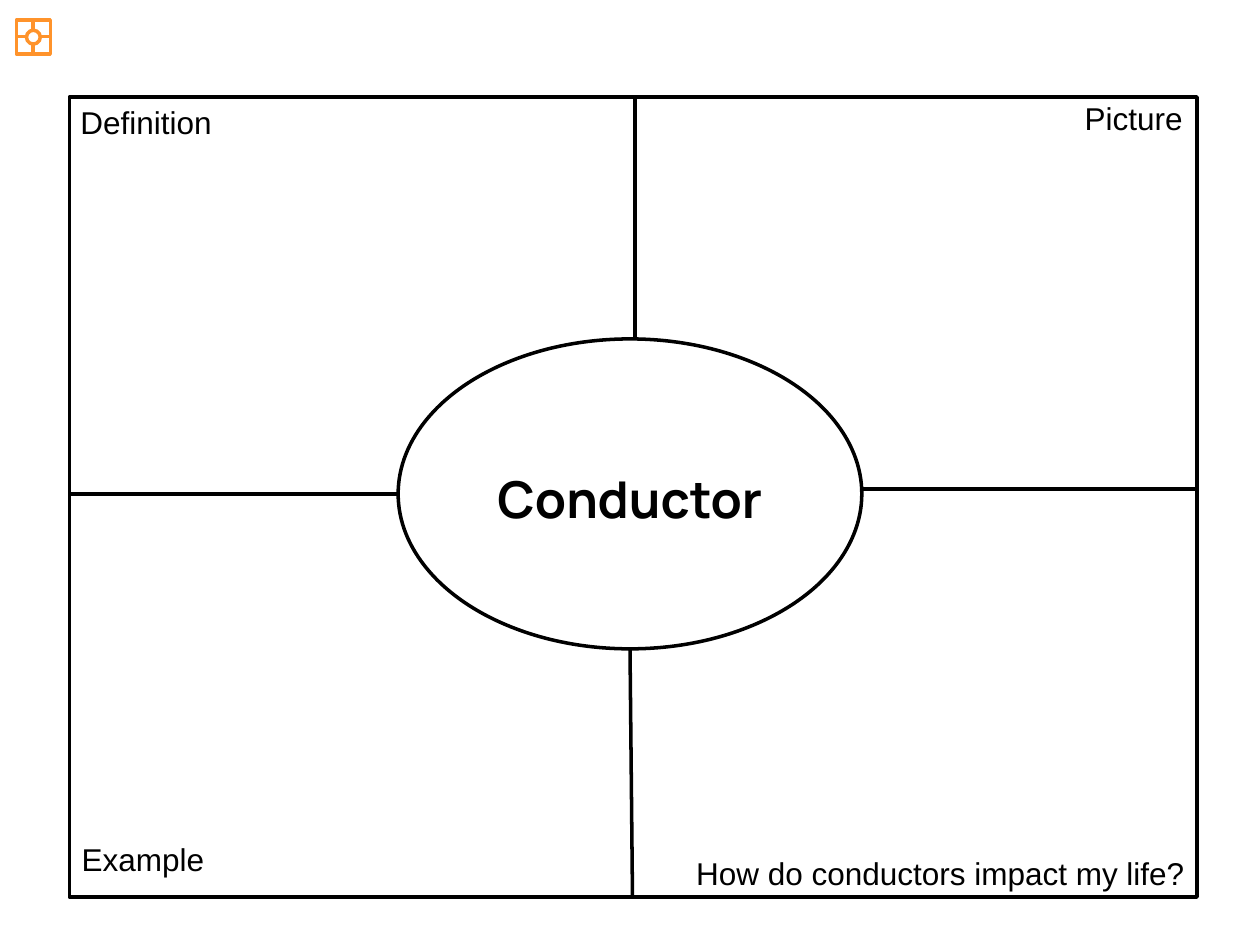
"""Build a four-square vocabulary organizer slide."""
from lxml import etree
from pptx import Presentation
from pptx.dml.color import RGBColor
from pptx.enum import shapes, text
from pptx.oxml import ns
from pptx.util import Inches, Pt

BLACK, ORANGE, WHITE = "000000", "FF932B", "FFFFFF"


def color(hex_code):
    """Turn a hex string into a colour."""
    return RGBColor.from_string(hex_code)


def add_outline(slide, kind, box, line_color, fill=None):
    """Add an outlined preset shape, hollow unless a fill is given."""
    outline = slide.shapes.add_shape(kind, *map(Inches, box))
    outline.shadow.inherit = False
    if fill:
        outline.fill.solid()
        outline.fill.fore_color.rgb = color(fill)
    else:
        outline.fill.background()
    outline.line.color.rgb = color(line_color)
    outline.line.width = Pt(2)


def add_divider(slide, ends, line_color):
    """Add a straight line between two points without a shadow."""
    divider = slide.shapes.add_connector(
        shapes.MSO_CONNECTOR.STRAIGHT, *map(Inches, ends))
    divider.line.color.rgb = color(line_color)
    divider.line.width = Pt(2)
    etree.SubElement(divider._element.spPr, ns.qn("a:effectLst"))


def add_organizer(slide, frame, oval, dividers, line_color):
    """Add a frame whose dividers meet a central oval."""
    add_outline(slide, shapes.MSO_SHAPE.RECTANGLE, frame, line_color)
    for ends in dividers:
        add_divider(slide, ends, line_color)
    add_outline(slide, shapes.MSO_SHAPE.OVAL, oval, line_color, WHITE)


def add_label(slide, wording, box, align=text.PP_ALIGN.LEFT,
              size=18, font="Arial", bold=False):
    """Add a one-paragraph text box."""
    frame = slide.shapes.add_textbox(*map(Inches, box)).text_frame
    frame.word_wrap = True
    frame.auto_size = text.MSO_AUTO_SIZE.SHAPE_TO_FIT_TEXT
    paragraph = frame.paragraphs[0]
    paragraph.text = wording
    paragraph.alignment = align
    paragraph.font.name = font
    paragraph.font.size = Pt(size)
    paragraph.font.bold = bold
    paragraph.font.color.rgb = color(BLACK)


def main():
    """Build and save the slide."""
    deck = Presentation()
    deck.slide_width, deck.slide_height = Inches(10), Inches(7.5)
    slide = deck.slides.add_slide(deck.slide_layouts[6])

    icon_dividers = [(0.26, 0.16, 0.26, 0.24), (0.26, 0.35, 0.26, 0.43),
                     (0.13, 0.29, 0.21, 0.29), (0.32, 0.29, 0.4, 0.29)]
    add_organizer(slide, (0.13, 0.16, 0.27, 0.27), (0.21, 0.24, 0.11, 0.11),
                  icon_dividers, ORANGE)

    main_dividers = [(5.04, 0.77, 5.04, 2.69), (5, 5.15, 5.02, 7.11),
                     (0.55, 3.92, 3.16, 3.92), (6.84, 3.88, 9.5, 3.88)]
    add_organizer(slide, (0.55, 0.77, 8.95, 6.35), (3.16, 2.69, 3.68, 2.46),
                  main_dividers, BLACK)

    add_label(slide, "Definition", (0.54, 0.77, 1.25, 0.4))
    add_label(slide, "Example", (0.55, 6.62, 1.18, 0.4))
    add_label(slide, "Picture", (8.51, 0.74, 0.99, 0.4))
    add_label(slide, "How do conductors impact my life?",
              (4.8, 6.73, 4.7, 0.4), text.PP_ALIGN.RIGHT)
    add_label(slide, "Conductor", (3.27, 3.66, 3.46, 0.59),
              text.PP_ALIGN.CENTER, 29, "Manrope", True)

    deck.save("out.pptx")


if __name__ == "__main__":
    main()
